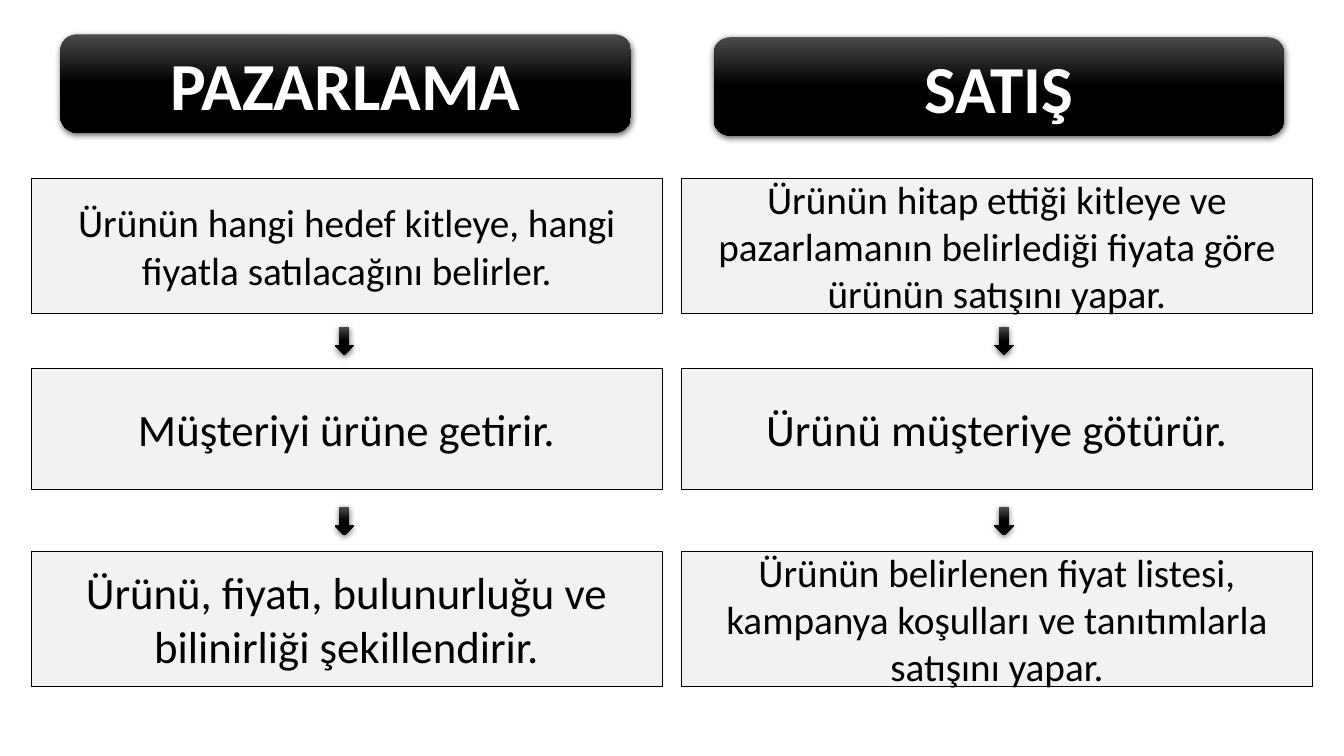
from lxml.etree import SubElement
from pptx import Presentation
from pptx.dml.color import RGBColor
from pptx.enum.shapes import MSO_SHAPE
from pptx.enum.text import MSO_ANCHOR, PP_ALIGN
from pptx.oxml.ns import qn
from pptx.util import Pt

BLACK = RGBColor(0x00, 0x00, 0x00)
CHARCOAL = RGBColor(0x4B, 0x4B, 0x4B)
LIGHT_GRAY = RGBColor(0xF2, 0xF2, 0xF2)
WHITE = RGBColor(0xFF, 0xFF, 0xFF)

BOX_WIDTH = 450.7
HEADER_WIDTH = 407.5
ARROW_WIDTH, ARROW_HEIGHT = 13.7, 20.2
ROWS = [(127.4, 96.5), (262.8, 87.1), (393.8, 96.5)]  # top, height
ARROW_TOPS = [233.3, 362.2]

# box left, header left, header top, arrow left, header, (text, size) of each box
COLUMNS = [
    (22.3, 43.2, 24.5, 239, "PAZARLAMA", [
        ("Ürünün hangi hedef kitleye, hangi fiyatla satılacağını belirler.", 28),
        ("Müşteriyi ürüne getirir.", 32),
        ("Ürünü, fiyatı, bulunurluğu ve bilinirliği şekillendirir.", 32),
    ]),
    (486.7, 509.8, 26.6, 710.3, "SATIŞ", [
        ("Ürünün hitap ettiği kitleye ve pazarlamanın belirlediği fiyata göre "
         "ürünün satışını yapar.", 28),
        ("Ürünü müşteriye götürür.", 32),
        ("Ürünün belirlenen fiyat listesi, kampanya koşulları ve tanıtımlarla "
         "satışını yapar.", 28),
    ]),
]


def add_block(kind, left, top, width, height, text="", size=28,
              color=BLACK, bold=False, glossy=False):
    """Add a flat bordered shape, or a glossy black one with a soft shadow."""
    sp = s.shapes.add_shape(kind, Pt(left), Pt(top), Pt(width), Pt(height))
    sp.shadow.inherit = False
    if glossy:
        sp.fill.gradient()
        sp.fill.gradient_angle = 270
        for stop, (position, rgb) in zip(sp.fill.gradient_stops,
                                         [(0, CHARCOAL), (0.5, BLACK)]):
            stop.position = position
            stop.color.rgb = rgb
        sp.line.fill.background()
        effects = sp.element.spPr.find(qn("a:effectLst"))
        shadow = SubElement(effects, qn("a:outerShdw"), blurRad=str(Pt(4.5)),
                            dist=str(Pt(1.5)), dir="5400000", rotWithShape="0")
        shade = SubElement(shadow, qn("a:srgbClr"), val=str(BLACK))
        SubElement(shade, qn("a:alpha"), val="63000")
    else:
        sp.fill.solid()
        sp.fill.fore_color.rgb = LIGHT_GRAY
        sp.line.color.rgb = BLACK
        sp.line.width = Pt(0.5)
    if text:
        tf = sp.text_frame
        tf.word_wrap = True
        tf.vertical_anchor = MSO_ANCHOR.MIDDLE
        p = tf.paragraphs[0]
        p.alignment = PP_ALIGN.CENTER
        r = p.add_run()
        r.text = text
        r.font.name = "Calibri"
        r.font.size = Pt(size)
        r.font.bold = bold
        r.font.color.rgb = color


prs = Presentation()
prs.slide_width, prs.slide_height = Pt(960), Pt(540)
s = prs.slides.add_slide(prs.slide_layouts[6])

for box_left, header_left, header_top, arrow_left, header, boxes in COLUMNS:
    add_block(MSO_SHAPE.ROUNDED_RECTANGLE, header_left, header_top,
              HEADER_WIDTH, 70.2, header, size=48, color=WHITE, bold=True,
              glossy=True)
    for (top, height), (text, size) in zip(ROWS, boxes):
        add_block(MSO_SHAPE.RECTANGLE, box_left, top, BOX_WIDTH, height,
                  text, size=size)
    for top in ARROW_TOPS:
        add_block(MSO_SHAPE.DOWN_ARROW, arrow_left, top, ARROW_WIDTH,
                  ARROW_HEIGHT, glossy=True)

prs.save("out.pptx")
